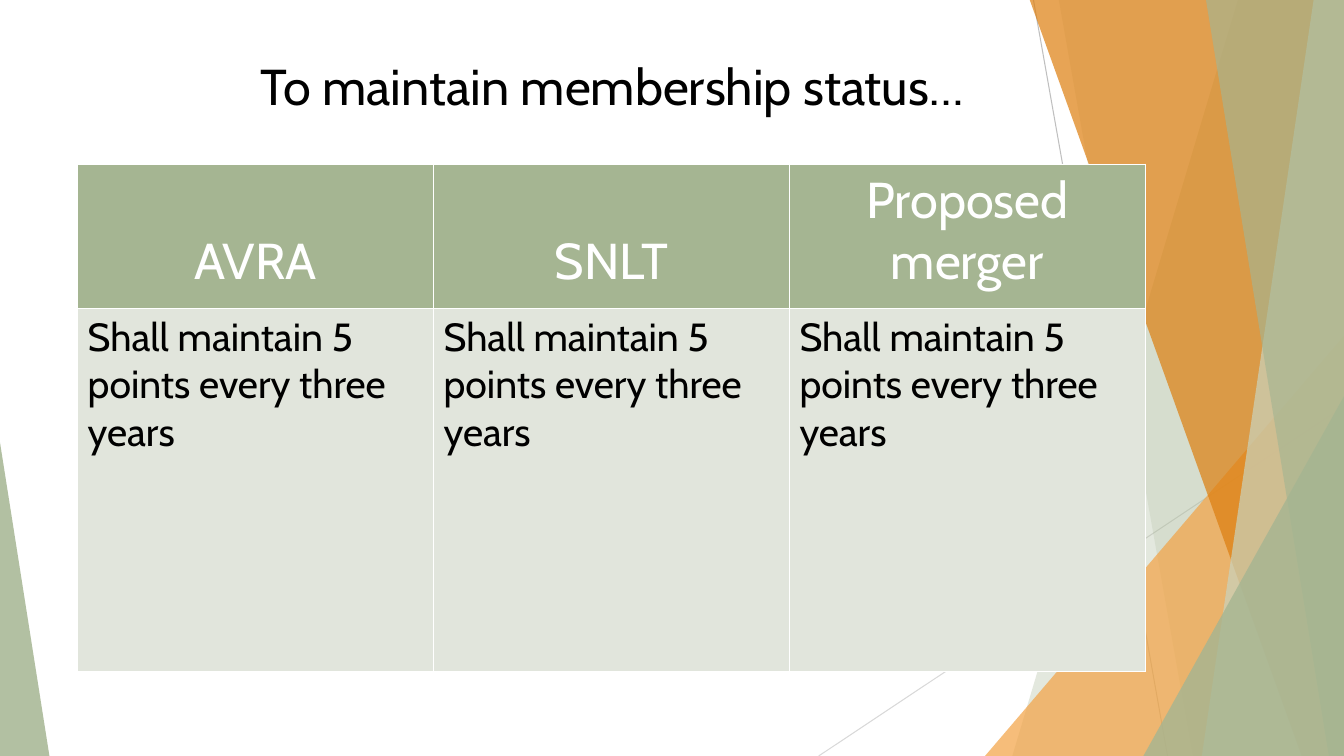
from lxml import etree
from pptx import Presentation
from pptx.dml.color import RGBColor
from pptx.enum.shapes import MSO_CONNECTOR, MSO_SHAPE
from pptx.enum.text import MSO_ANCHOR, MSO_AUTO_SIZE, PP_ALIGN
from pptx.oxml import parse_xml
from pptx.oxml.ns import qn
from pptx.util import Pt

PX = 9144
WIDE, HIGH = 1333, 750
LINE = MSO_CONNECTOR.STRAIGHT
WEDGE = MSO_SHAPE.ISOSCELES_TRIANGLE
TOP, MID, LOW = MSO_ANCHOR.TOP, MSO_ANCHOR.MIDDLE, MSO_ANCHOR.BOTTOM
FIXED = MSO_AUTO_SIZE.NONE
LEFT, CENTER = PP_ALIGN.LEFT, PP_ALIGN.CENTER
NS = "http://schemas.openxmlformats.org/drawingml/2006/main"
SAGE = "A5B592"
RULE = "Shall maintain 5 points every three years"


def emu(*sizes):
    return [size * PX for size in sizes]


def color(code):
    return RGBColor.from_string(code)


def assign(item, values):
    for name, value in values.items():
        setattr(item, name, value)


def paint(shape, code, alpha):
    shape.shadow.inherit = False
    shape.line.fill.background()
    shape.fill.solid()
    shape.fill.fore_color.rgb = color(code)
    tint = shape.fill._xPr.find(qn("a:solidFill"))[0]
    etree.SubElement(tint, qn("a:alpha"), val=str(alpha * 1000))


def add_line(slide, ends, code):
    line = slide.shapes.add_connector(LINE, *emu(*ends))
    line.line.color.rgb = color(code)
    line.line.width = Pt(0.75)
    etree.SubElement(line._element.spPr, qn("a:effectLst"))


def add_band(slide, upper, lower, code, alpha):
    path = slide.shapes.build_freeform(upper, -1, scale=PX)
    path.add_line_segments([(WIDE, -1), (WIDE, HIGH), (lower, HIGH)], close=True)
    paint(path.convert_to_shape(), code, alpha)


def add_wedge(slide, left, top, width, peak, code, alpha):
    wedge = slide.shapes.add_shape(WEDGE, *emu(left, top, width, HIGH - top))
    wedge.adjustments[0] = peak
    paint(wedge, code, alpha)


def add_decor(slide):
    add_line(slide, (1025, 0, 1158, HIGH), "BFBFBF")
    add_line(slide, (WIDE, 403, 812, HIGH), "D9D9D9")
    add_band(slide, 1228, 1004, SAGE, 30)
    add_band(slide, 1050, 1183, SAGE, 20)
    add_wedge(slide, 977, 333, 356, 1, "F3A447", 72)
    add_band(slide, 1021, 1291, "DD7E0E", 70)
    add_band(slide, 1303, 1192, "C9D3BE", 70)
    add_band(slide, 1196, 1318, SAGE, 65)
    add_wedge(slide, 1134, 393, 199, 1, SAGE, 80)
    add_wedge(slide, 0, 439, 49, 0, SAGE, 85)


def write(frame, lines, size, code, align):
    frame.text = "\n".join(lines)
    for para in frame.paragraphs:
        para.alignment = align
        font = para.runs[0].font
        assign(font, {"name": "Cabin", "size": Pt(size), "bold": False})
        font.color.rgb = color(code)


def add_edges(cell):
    props = cell._tc.get_or_add_tcPr()
    for side in "LRTB":
        props.append(parse_xml(
            f'<a:ln{side} xmlns:a="{NS}" w="12700"><a:solidFill>'
            f'<a:srgbClr val="FFFFFF"/></a:solidFill></a:ln{side}>'))


def add_grid(slide, left, top, width, high, head):
    names = [["AVRA"], ["SNLT"], ["Proposed", "merger"]]
    rows = [
        (names, head, 36, "FFFFFF", CENTER, SAGE, LOW, 16),
        ([[RULE]] * len(names), high - head, 28, "000000", LEFT, "E1E5DC", TOP, 5),
    ]
    frame = slide.shapes.add_table(
        len(rows), len(names), *emu(left, top, width, high))
    table = frame.table
    table.horz_banding = False
    for row, (texts, tall, size, ink, align, back, anchor, pad) in enumerate(rows):
        table.rows[row].height = tall * PX
        for col, lines in enumerate(texts):
            cell = table.cell(row, col)
            write(cell.text_frame, lines, size, ink, align)
            assign(cell, {"vertical_anchor": anchor, "margin_bottom": pad * PX})
            add_edges(cell)
            cell.fill.solid()
            cell.fill.fore_color.rgb = color(back)


def add_title(slide, left, top, width, high):
    title = slide.shapes.title
    names = ("left", "top", "width", "height")
    assign(title, dict(zip(names, emu(left, top, width, high))))
    frame = title.text_frame
    write(frame, ["To maintain membership status…"], 36, "000000", CENTER)
    assign(frame, {"word_wrap": True, "auto_size": FIXED, "vertical_anchor": MID})
    title._element.getparent().append(title._element)


def main():
    deck = Presentation()
    assign(deck, {"slide_width": WIDE * PX, "slide_height": HIGH * PX})
    slide = deck.slides.add_slide(deck.slide_layouts[5])
    add_decor(slide)
    add_grid(slide, 77, 163, 1059, 503, 143)
    add_title(slide, 77, 49, 1060, 71)
    deck.save("out.pptx")


if __name__ == "__main__":
    main()
